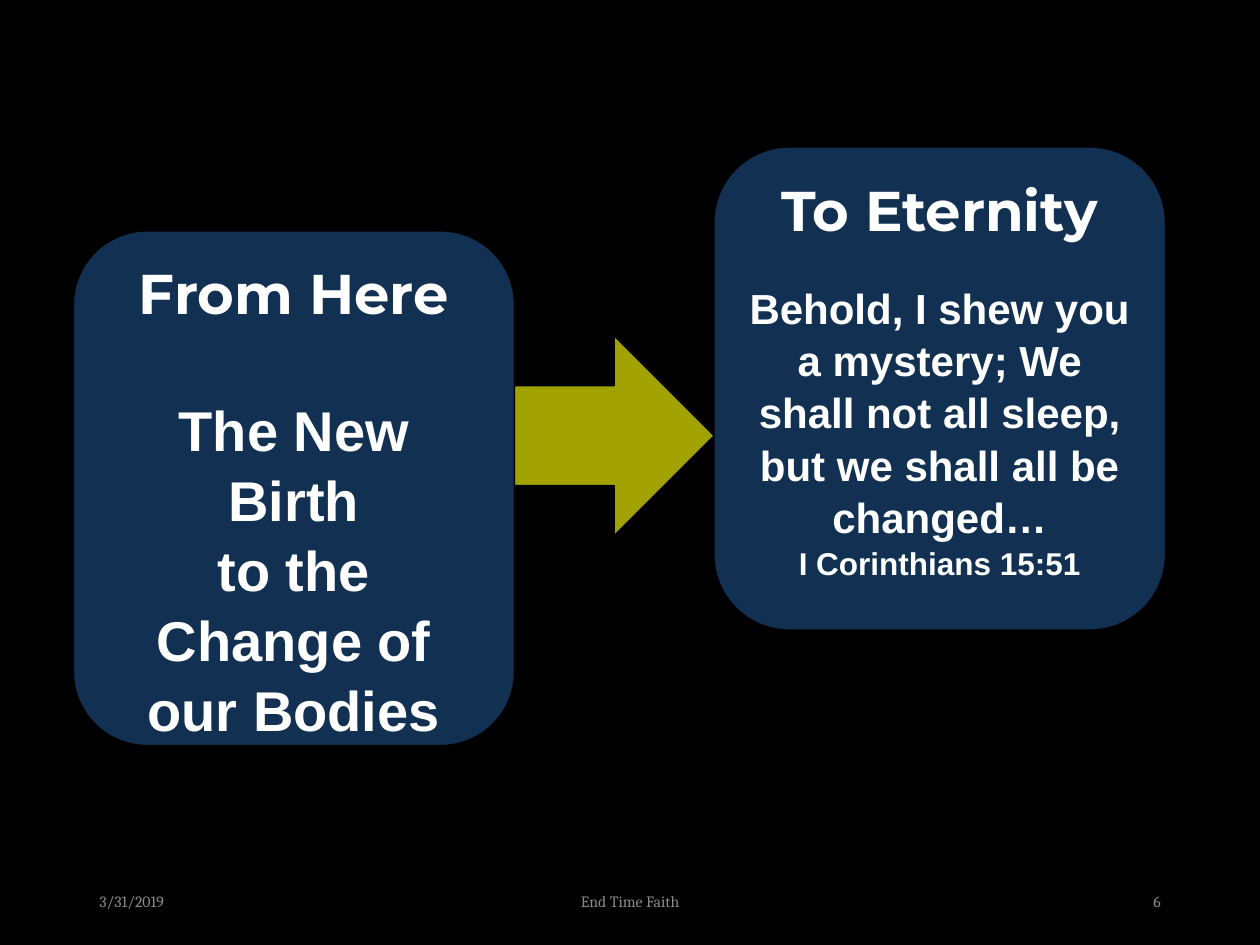
from dataclasses import dataclass

from lxml.etree import SubElement
from pptx import Presentation
from pptx.dml.color import RGBColor as Rgb
from pptx.enum.shapes import MSO_SHAPE as Kind
from pptx.enum.text import MSO_ANCHOR as Anchor, PP_ALIGN as Align
from pptx.oxml.ns import qn
from pptx.util import Inches, Pt


@dataclass(frozen=True)
class Theme:
    back: str = "000000"
    card: str = "113052"
    arrow: str = "FFFF00"
    text: str = "FFFFFF"
    muted: str = "8C8C8C"
    head: str = "Montserrat"
    body: str = "Arial"
    foot: str = "Cambria"
    big: int = 32
    mid: int = 24
    small: int = 18
    tiny: int = 9


T = Theme()
WIDE, HIGH = 10, 7.5
COL, ROW = WIDE / 120, HIGH / 90  # grid cells of 1/12 inch


def place(cells):
    """Turn column, row, width and height in cells into lengths."""
    return [Inches(n * unit) for n, unit in zip(cells, (COL, ROW) * 2)]


def style(font, color, **form):
    font.color.rgb = Rgb.from_string(color)
    for key, val in form.items():
        setattr(font, key, val)


def add_para(frame, first, text, size, face, color, align,
             bold=False, gap=0, lead=None):
    para = frame.paragraphs[0] if first else frame.add_paragraph()
    form = {"alignment": align, "space_before": Pt(gap), "line_spacing": lead}
    for key, val in form.items():
        setattr(para, key, val)
    run = para.add_run()
    run.text = text
    style(run.font, color, size=Pt(size), name=face, bold=bold)


def add_block(slide, kind, cells, fill):
    shape = slide.shapes.add_shape(kind, *place(cells))
    shape.shadow.inherit = False
    shape.fill.solid()
    shape.fill.fore_color.rgb = Rgb.from_string(fill)
    shape.line.color.rgb = Rgb.from_string(T.back)
    shape.line.width = Pt(0.75)
    return shape


def add_card(slide, cells, title, lines):
    """Rounded card: a heading, then lines of (text, size, gap)."""
    frame = add_block(slide, Kind.ROUNDED_RECTANGLE, cells, T.card).text_frame
    frame.word_wrap = True
    frame.vertical_anchor = Anchor.TOP
    add_para(frame, True, title, T.big, T.head, T.text, Align.CENTER, True)
    for text, size, gap in lines:
        add_para(frame, False, text, size, T.body, T.text, Align.CENTER,
                 True, gap, 1.045)


def add_arrow(slide, cells, alpha):
    arrow = add_block(slide, Kind.RIGHT_ARROW, cells, T.arrow)
    color = arrow.fill._xPr.find(".//" + qn("a:srgbClr"))
    SubElement(color, qn("a:alpha"), val=str(alpha * 1000))


def add_foot(slide, left, width, text, align):
    box = slide.shapes.add_textbox(
        Inches(left), Inches(6.95), Inches(width), Inches(0.4))
    frame = box.text_frame
    frame.word_wrap = True
    frame.vertical_anchor = Anchor.MIDDLE
    add_para(frame, True, text, T.tiny, T.foot, T.muted, align)


def main():
    deck = Presentation()
    deck.slide_width, deck.slide_height = Inches(WIDE), Inches(HIGH)
    slide = deck.slides.add_slide(deck.slide_layouts[6])
    slide.background.fill.solid()
    slide.background.fill.fore_color.rgb = Rgb.from_string(T.back)

    # The two stages and the arrow between them
    add_card(slide, (7, 22, 42, 49), "From Here", [
        ("The New Birth", T.big, 38.4),
        ("to the", T.big, 0),
        ("Change of our Bodies", T.big, 0),
    ])
    add_card(slide, (68, 14, 43, 46), "To Eternity", [
        ("Behold, I shew you a mystery; We shall not all sleep, "
         "but we shall all be changed…", T.mid, 21.6),
        ("I Corinthians 15:51", T.small, 0),
    ])
    add_arrow(slide, (49, 32, 19, 19), 63)

    # Footer
    side, mid, edge = 2.25, 3.38, 0.69
    add_foot(slide, edge, side, "3/31/2019", Align.LEFT)
    add_foot(slide, (WIDE - mid) / 2, mid, "End Time Faith", Align.CENTER)
    add_foot(slide, WIDE - edge - side, side, "6", Align.RIGHT)

    deck.save("out.pptx")


if __name__ == "__main__":
    main()
